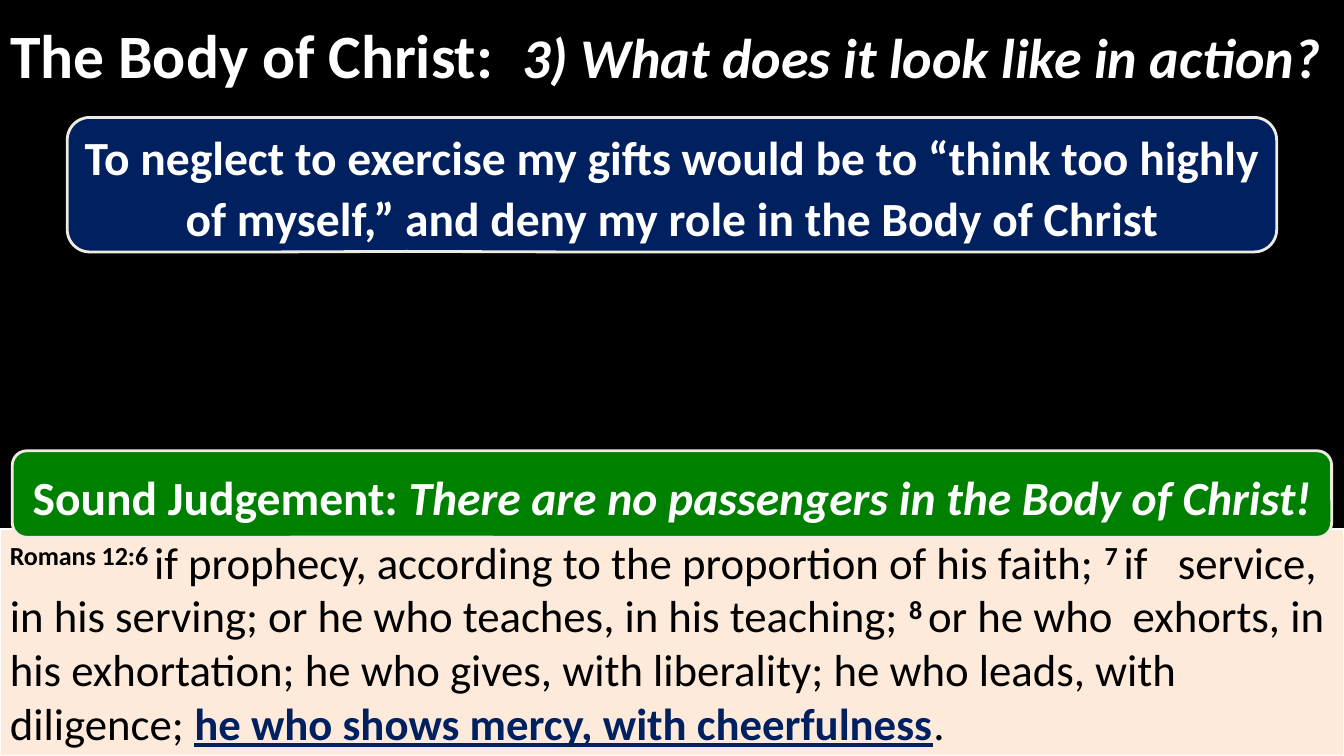
from pptx import Presentation
from pptx.dml.color import RGBColor
from pptx.enum.shapes import MSO_SHAPE as Shape
from pptx.enum.text import MSO_ANCHOR as Anchor, MSO_AUTO_SIZE as AutoSize, PP_ALIGN as Align
from pptx.util import Cm, Pt

WIDTH, HEIGHT = 33.87, 19.05
BLACK, WHITE, NAVY, GREEN = "000000", "FFFFFF", "002060", "008000"
CREAM, PEACH = "EEECE1", "FDEADA"

TITLE = [
    ("The Body of Christ:  ", {"size": 44, "bold": True}),
    ("3) What does it look like in action?", {"size": 40, "bold": True, "italic": True}),
]
NUMBER = {"bold": True, "raised": True}
VERSE = [
    ("Romans 12:6 ", NUMBER),
    ("if prophecy, according to the proportion of his faith; ", {}),
    ("7 ", NUMBER),
    ("if   service, in his serving; or he who teaches, in his teaching; ", {}),
    ("8 ", NUMBER),
    ("or he who  exhorts, in his exhortation; he who gives, with liberality; "
     "he who leads, with diligence; ", {}),
    ("he who shows mercy, with cheerfulness", {"bold": True, "underline": True, "color": NAVY}),
    (".", {}),
]
CALLOUTS = [
    {"top": 2.96, "width": 30.48, "height": 3.39, "fill": NAVY, "runs": [
        ("To neglect to exercise my gifts would be to “think too highly of myself,” "
         "and deny my role in the Body of Christ", {"bold": True}),
    ]},
    {"top": 11.36, "width": 33.25, "height": 2.18, "fill": GREEN, "runs": [
        ("Sound Judgement: ", {"bold": True}),
        ("There are no passengers in the Body of Christ!", {"bold": True, "italic": True}),
    ]},
]
CALLOUT_ADJUSTMENTS = (-0.219, 0.496, 0.167)


def rgb(color):
    return RGBColor.from_string(color)


def paint(shape, fill, line, weight):
    shape.shadow.inherit = False
    shape.fill.solid()
    shape.fill.fore_color.rgb = rgb(fill)
    shape.line.color.rgb = rgb(line)
    shape.line.width = Pt(weight)


def write(shape, runs, size, color, align, anchor, spacing=1.0):
    frame = shape.text_frame
    frame.word_wrap = True
    frame.auto_size = AutoSize.NONE
    frame.vertical_anchor = anchor
    para = frame.paragraphs[0]
    para.alignment = align
    para.line_spacing = spacing
    for text, style in runs:
        span = para.add_run()
        span.text = text
        font = span.font
        font.name = "Calibri"
        font.size = Pt(style.get("size", size))
        font.bold = style.get("bold", False)
        font.italic = style.get("italic", False)
        font.underline = style.get("underline", False)
        font.color.rgb = rgb(style.get("color", color))
        if style.get("raised"):
            span._r.get_or_add_rPr().set("baseline", "30000")


def add_title(page):
    title = page.shapes.title
    title.left, title.top, title.width, title.height = Cm(0), Cm(0), Cm(WIDTH), Cm(2.72)
    title.fill.solid()
    title.fill.fore_color.rgb = rgb(BLACK)
    write(title, TITLE, 44, WHITE, Align.LEFT, Anchor.MIDDLE)


def add_verse(page):
    top = 13.34
    box = page.shapes.add_shape(Shape.RECTANGLE, Cm(0), Cm(top), Cm(WIDTH), Cm(HEIGHT - top))
    paint(box, PEACH, WHITE, 1.5)
    write(box, VERSE, 32, BLACK, Align.LEFT, Anchor.TOP)


def add_callout(page, item):
    left = (WIDTH - item["width"]) / 2
    box = page.shapes.add_shape(Shape.ROUNDED_RECTANGULAR_CALLOUT, Cm(left), Cm(item["top"]),
                                Cm(item["width"]), Cm(item["height"]))
    for index, value in enumerate(CALLOUT_ADJUSTMENTS):
        box.adjustments[index] = value
    paint(box, item["fill"], CREAM, 2)
    write(box, item["runs"], 34, WHITE, Align.CENTER, Anchor.MIDDLE, 1.07)


def main():
    deck = Presentation()
    deck.slide_width, deck.slide_height = Cm(WIDTH), Cm(HEIGHT)
    page = deck.slides.add_slide(deck.slide_layouts[5])
    page.background.fill.solid()
    page.background.fill.fore_color.rgb = rgb(BLACK)
    add_title(page)
    add_verse(page)
    for item in CALLOUTS:
        add_callout(page, item)
    deck.save("out.pptx")


if __name__ == "__main__":
    main()
